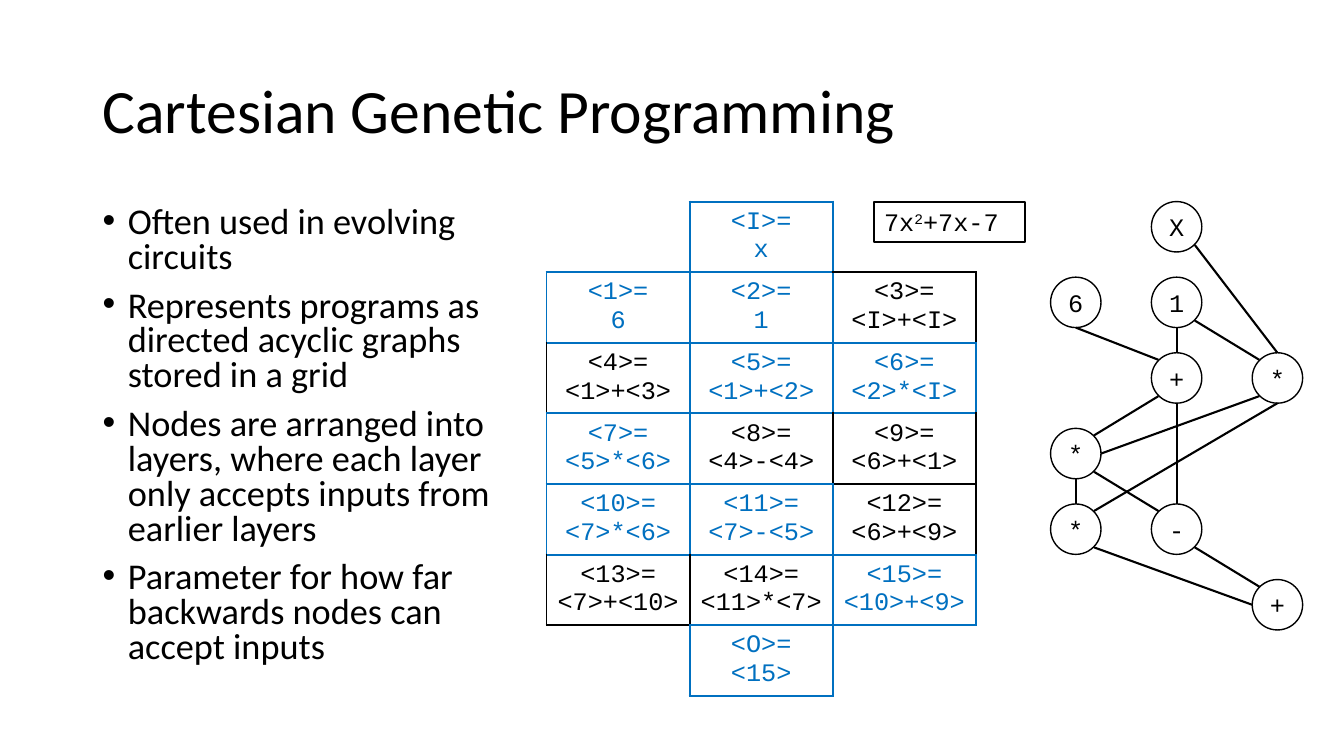
from math import cos, radians, sin

from lxml.etree import SubElement
from pptx import Presentation
from pptx.dml.color import RGBColor
from pptx.enum.shapes import MSO_CONNECTOR as Connector, MSO_SHAPE as Shape
from pptx.enum.text import MSO_ANCHOR as Anchor, PP_ALIGN as Align
from pptx.oxml import parse_xml
from pptx.oxml.ns import nsdecls, qn
from pptx.util import Emu, Pt

PX = 9144  # 100 px to the inch
COLORS = {"ink": "000000", "active": "0070C0", "paper": "FFFFFF"}
SANS, MONO = "Calibri", "Courier New"

BULLETS = [
    "Often used in evolving circuits",
    "Represents programs as directed acyclic graphs stored in a grid",
    "Nodes are arranged into layers, where each layer only accepts inputs from earlier layers",
    "Parameter for how far backwards nodes can accept inputs",
]

# Each grid cell is (name, expression); None is an unused corner
GRID = [
    [None, ("I", "x"), None],
    [("1", "6"), ("2", "1"), ("3", "<I>+<I>")],
    [("4", "<1>+<3>"), ("5", "<1>+<2>"), ("6", "<2>*<I>")],
    [("7", "<5>*<6>"), ("8", "<4>-<4>"), ("9", "<6>+<1>")],
    [("10", "<7>*<6>"), ("11", "<7>-<5>"), ("12", "<6>+<9>")],
    [("13", "<7>+<10>"), ("14", "<11>*<7>"), ("15", "<10>+<9>")],
    [None, ("O", "<15>"), None],
]
ACTIVE = {"I", "1", "2", "5", "6", "7", "10", "11", "15", "O"}

# Graph nodes: key -> (label, column, row)
NODES = {
    "x": ("X", 1, 0), "one": ("1", 1, 1), "six": ("6", 0, 1),
    "sum": ("+", 1, 2), "product": ("*", 2, 2), "mix": ("*", 0, 3),
    "power": ("*", 0, 4), "difference": ("-", 1, 4), "result": ("+", 2, 5),
}
EDGES = [
    ("x", "SE", "product", "N"), ("one", "S", "sum", "N"),
    ("sum", "NW", "six", "S"), ("mix", "NE", "sum", "SW"),
    ("product", "SW", "mix", "E"), ("one", "SE", "product", "NW"),
    ("power", "N", "mix", "S"), ("product", "S", "power", "NE"),
    ("mix", "SE", "difference", "NW"), ("sum", "S", "difference", "N"),
    ("difference", "SE", "result", "NW"), ("power", "SE", "result", "W"),
]
ANGLES = {"E": 0, "SE": 45, "S": 90, "SW": 135, "W": 180, "NW": 225, "N": 270, "NE": 315}


def px(*lengths):
    return [Emu(round(length) * PX) for length in lengths]


def color(name):
    return RGBColor.from_string(COLORS[name])


def style_text(paragraph, size, font, ink="ink", align=Align.LEFT):
    paragraph.alignment = align
    for run in paragraph.runs:
        run.font.size, run.font.name = Pt(size), font
        run.font.color.rgb = color(ink)


def add_title(slide, box):
    frame = slide.shapes.add_textbox(*px(*box)).text_frame
    frame.word_wrap = True
    frame.vertical_anchor = Anchor.MIDDLE
    frame.text = "Cartesian Genetic Programming"
    frame.paragraphs[0].line_spacing = 0.9
    style_text(frame.paragraphs[0], 44, SANS)


def add_bullets(slide, box):
    frame = slide.shapes.add_textbox(*px(*box)).text_frame
    frame.word_wrap = True
    frame.text = "\n".join(BULLETS)
    for paragraph in frame.paragraphs:
        paragraph.line_spacing = 0.8
        paragraph.space_before = Pt(10)
        style_text(paragraph, 25.9, SANS)
        properties = paragraph._p.get_or_add_pPr()
        properties.set("marL", str(25 * PX))
        properties.set("indent", str(-25 * PX))
        SubElement(properties, qn("a:buFont"), typeface="Arial")
        SubElement(properties, qn("a:buChar"), char="•")


def cell_ink(row, column):
    """Colour name of a grid cell, or None where there is no node."""
    inside = 0 <= row < len(GRID) and 0 <= column < len(GRID[0])
    if not inside or GRID[row][column] is None:
        return None
    return "active" if GRID[row][column][0] in ACTIVE else "ink"


def set_borders(cell, row, column):
    """An edge is active if either side is, and absent between empty cells."""
    sides = {"lnL": (0, -1), "lnR": (0, 1), "lnT": (-1, 0), "lnB": (1, 0)}
    properties = cell._tc.get_or_add_tcPr()
    for index, (tag, (down, right)) in enumerate(sides.items()):
        inks = {cell_ink(row, column), cell_ink(row + down, column + right)}
        ink = next((name for name in ("active", "ink") if name in inks), None)
        paint = "<a:noFill/>"
        if ink:
            paint = f'<a:solidFill><a:srgbClr val="{COLORS[ink]}"/></a:solidFill>'
        line = f'<a:{tag} {nsdecls("a")} w="{Pt(1.5)}">{paint}</a:{tag}>'
        properties.insert(index, parse_xml(line))


def add_grid(slide, box):
    rows, columns = len(GRID), len(GRID[0])
    table = slide.shapes.add_table(rows, columns, *px(*box)).table
    table.first_row = table.horz_banding = False
    for row, entries in enumerate(GRID):
        for column, entry in enumerate(entries):
            cell = table.cell(row, column)
            cell.fill.background()
            set_borders(cell, row, column)
            if entry is None:
                continue
            name, expression = entry
            cell.vertical_anchor = Anchor.MIDDLE
            cell.text_frame.text = f"<{name}>=\n{expression}"
            for paragraph in cell.text_frame.paragraphs:
                style_text(paragraph, 18, MONO, cell_ink(row, column), Align.CENTER)


def add_outlined(slide, kind, box, width):
    shape = slide.shapes.add_shape(kind, *px(*box))
    shape.shadow.inherit = False
    shape.line.color.rgb = color("ink")
    shape.line.width = Pt(width)
    return shape


def add_formula(slide, box):
    shape = add_outlined(slide, Shape.RECTANGLE, box, 1.5)
    shape.fill.background()
    frame = shape.text_frame
    frame.vertical_anchor = Anchor.TOP
    paragraph = frame.paragraphs[0]
    for text in ("7x", "2", "+7x-7"):
        paragraph.add_run().text = text
    style_text(paragraph, 18, MONO)
    paragraph.runs[1]._r.get_or_add_rPr().set("baseline", "30000")


def add_graph(slide, box):
    left, top, width, height = box
    size = 50
    step_x, step_y = (width - size) / 2, (height - size) / 5

    def corner(key):
        _, column, row = NODES[key]
        return left + column * step_x, top + row * step_y

    def rim(key, side):
        x, y = corner(key)
        angle, radius = radians(ANGLES[side]), size / 2
        return x + radius * (1 + cos(angle)), y + radius * (1 + sin(angle))

    # Nodes
    for key, (label, _, _) in NODES.items():
        node = add_outlined(slide, Shape.OVAL, (*corner(key), size, size), 1)
        node.fill.solid()
        node.fill.fore_color.rgb = color("paper")
        frame = node.text_frame
        frame.margin_left = frame.margin_right = 0
        frame.vertical_anchor = Anchor.MIDDLE
        frame.text = label
        style_text(frame.paragraphs[0], 18, MONO, align=Align.CENTER)

    # Edges
    for start, start_side, end, end_side in EDGES:
        points = px(*rim(start, start_side), *rim(end, end_side))
        edge = slide.shapes.add_connector(Connector.STRAIGHT, *points)
        edge.line.color.rgb = color("ink")
        edge.line.width = Pt(1.5)
        SubElement(edge._element.spPr, qn("a:effectLst"))


def main():
    presentation = Presentation()
    presentation.slide_width, presentation.slide_height = px(1333, 750)
    slide = presentation.slides.add_slide(presentation.slide_layouts[6])
    add_title(slide, (92, 40, 1150, 145))
    add_bullets(slide, (92, 200, 450, 476))
    add_grid(slide, (542, 200, 426, 490))
    add_formula(slide, (867, 200, 150, 40))
    add_graph(slide, (1042, 200, 250, 425))
    presentation.save("out.pptx")


if __name__ == "__main__":
    main()
